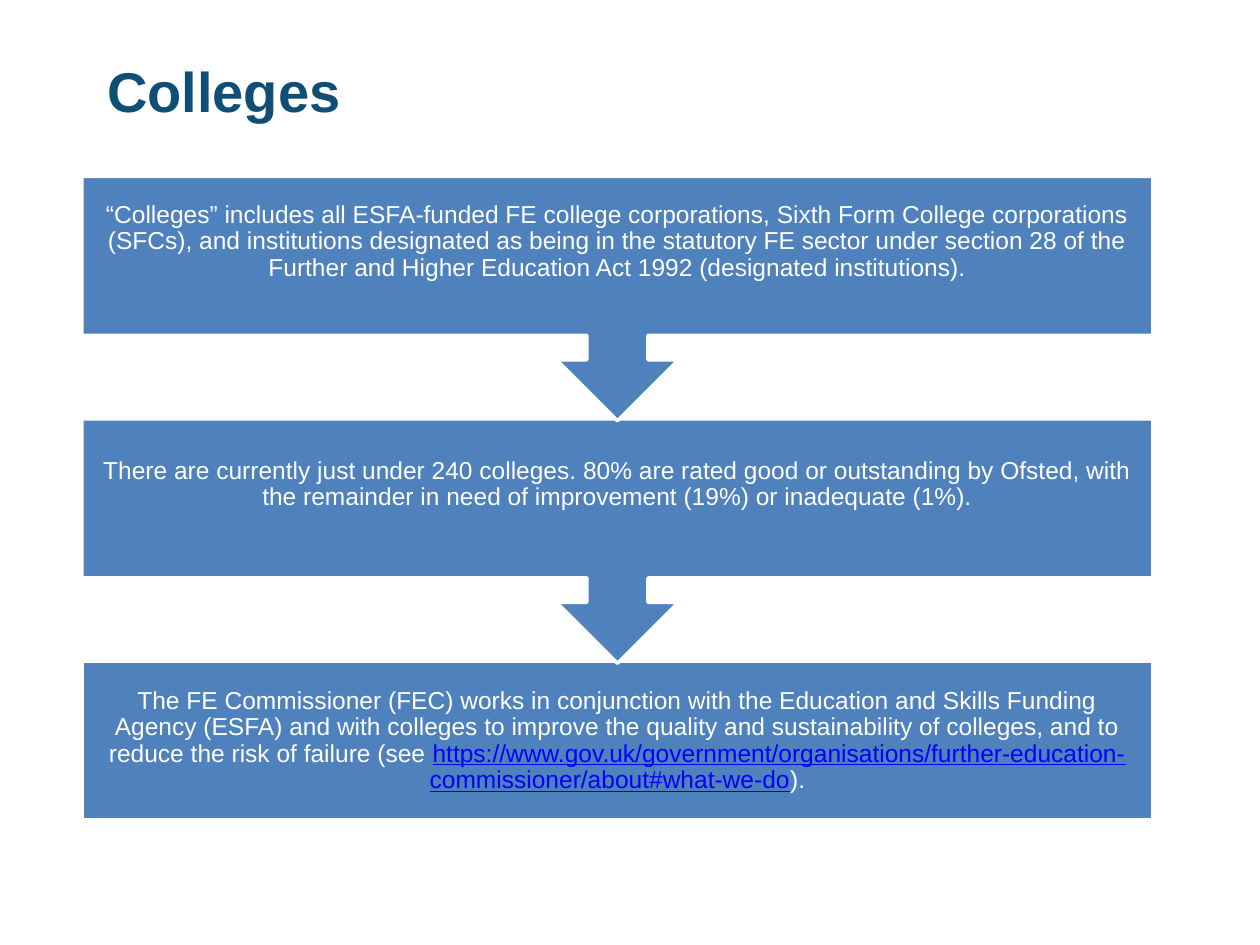
from pptx import Presentation
from pptx.dml.color import RGBColor
from pptx.enum.shapes import MSO_SHAPE
from pptx.enum.text import MSO_ANCHOR, MSO_AUTO_SIZE, PP_ALIGN
from pptx.util import Inches, Pt

RECTANGLE = MSO_SHAPE.RECTANGLE
CALLOUT = MSO_SHAPE.UP_ARROW_CALLOUT
MIDDLE = MSO_ANCHOR.MIDDLE
NO_FIT = MSO_AUTO_SIZE.NONE
CENTER, LEFT_ALIGN = PP_ALIGN.CENTER, PP_ALIGN.LEFT

NAVY = RGBColor(0x10, 0x4F, 0x75)
BLUE = RGBColor(0x4F, 0x81, 0xBD)
WHITE = RGBColor(0xFF, 0xFF, 0xFF)
LINK_BLUE = RGBColor(0x00, 0x00, 0xFF)
FONT = "Arial"

TITLE = "Colleges"
STEPS = [
    [("“Colleges” includes all ESFA-funded FE college corporations, Sixth Form "
      "College corporations (SFCs), and institutions designated as being in the "
      "statutory FE sector under section 28 of the Further and Higher Education "
      "Act 1992 (designated institutions).", WHITE)],
    [("There are currently just under 240 colleges. 80% are rated good or "
      "outstanding by Ofsted, with the remainder in need of improvement (19%) "
      "or inadequate (1%).", WHITE)],
    [("The FE Commissioner (FEC) works in conjunction with the Education and "
      "Skills Funding Agency (ESFA) and with colleges to improve the quality and "
      "sustainability of colleges, and to reduce the risk of failure (see ", WHITE),
     ("https://www.gov.uk/government/organisations/"
      "further-education-commissioner/about#what-we-do", LINK_BLUE),
     (").", WHITE)],
]

LEFT, TOP, WIDTH = 0.65, 1.4, 8.5
PITCH, BOX_HEIGHT, CALLOUT_HEIGHT = 1.925, 1.26, 1.94
INSET, RAISED_INSET = 0.11, 0.33


def add_span(para, text, size, color):
    span = para.add_run()
    span.text = text
    span.font.name = FONT
    span.font.size = Pt(size)
    span.font.color.rgb = color
    return span


def add_title(page):
    title = page.shapes.title
    title.left, title.top = Inches(0.75), Inches(0.36)
    title.width, title.height = Inches(8.5), Inches(0.71)
    frame = title.text_frame
    frame.vertical_anchor = MIDDLE
    frame.auto_size = NO_FIT
    para = frame.paragraphs[0]
    para.alignment = LEFT_ALIGN
    add_span(para, TITLE, 32, NAVY).font.bold = True


def add_step(page, index, spans):
    is_last = index == len(STEPS) - 1
    top = TOP + index * PITCH
    kind, height = (RECTANGLE, BOX_HEIGHT) if is_last else (CALLOUT, CALLOUT_HEIGHT)
    shape = page.shapes.add_shape(
        kind, Inches(LEFT), Inches(top), Inches(WIDTH), Inches(height))
    shape.rotation = 0 if is_last else 180
    shape.shadow.inherit = False
    shape.fill.solid()
    shape.fill.fore_color.rgb = BLUE
    shape.line.color.rgb = WHITE
    shape.line.width = Pt(2)

    box = page.shapes.add_textbox(
        Inches(LEFT), Inches(top), Inches(WIDTH), Inches(BOX_HEIGHT))
    frame = box.text_frame
    frame.word_wrap = True
    frame.vertical_anchor = MIDDLE
    frame.margin_left = frame.margin_right = frame.margin_top = Inches(INSET)
    frame.margin_bottom = Inches(INSET if is_last else RAISED_INSET)
    para = frame.paragraphs[0]
    para.alignment = CENTER
    para.line_spacing = 0.9
    for text, color in spans:
        span = add_span(para, text, 14, color)
        if color == LINK_BLUE:
            span.font.underline = True


def main():
    deck = Presentation()
    deck.slide_width, deck.slide_height = Inches(10), Inches(7.5)
    page = deck.slides.add_slide(deck.slide_layouts.get_by_name("Title Only"))
    add_title(page)
    for index, spans in reversed(list(enumerate(STEPS))):
        add_step(page, index, spans)
    deck.save("out.pptx")


if __name__ == "__main__":
    main()
